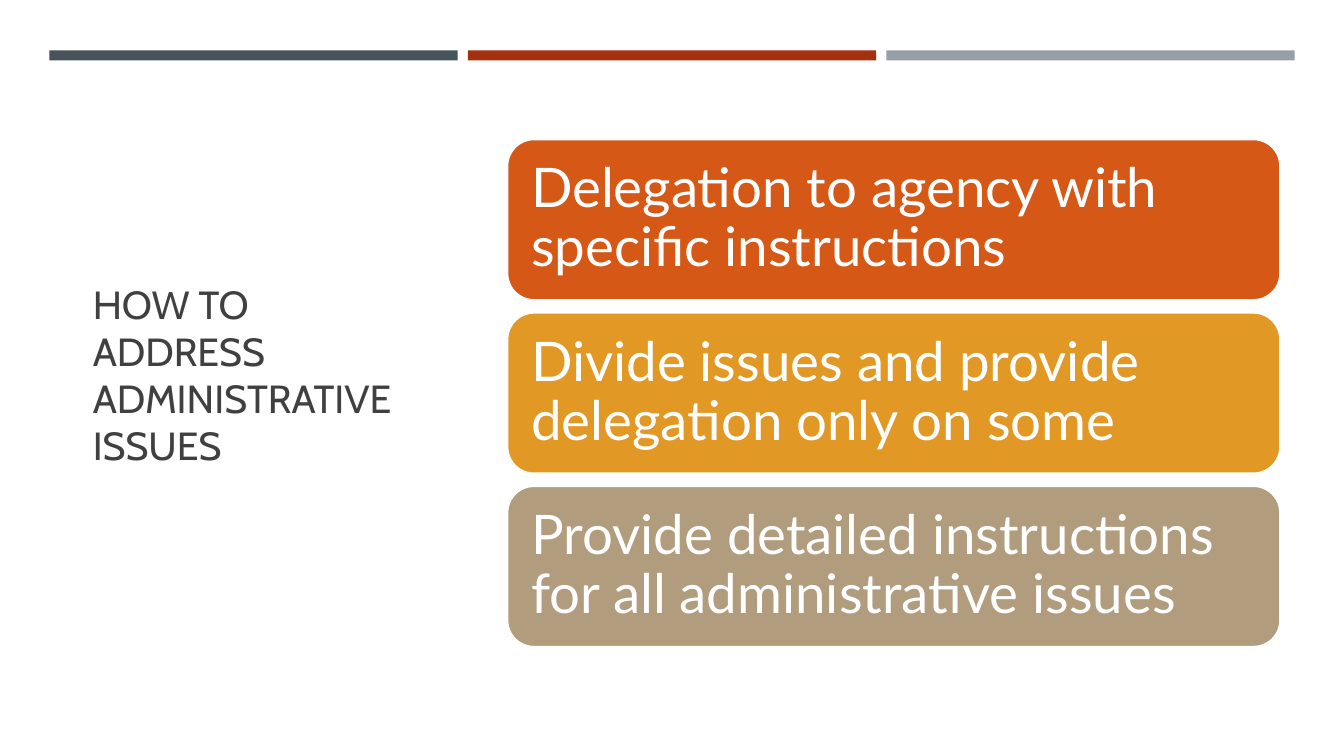
from pptx import Presentation
from pptx.dml.color import RGBColor
from pptx.enum.shapes import MSO_SHAPE as Shape
from pptx.enum.text import MSO_ANCHOR as Anchor, MSO_AUTO_SIZE as AutoSize, PP_ALIGN as Align
from pptx.util import Inches, Pt

SLATE = RGBColor(0x46, 0x53, 0x59)
BRICK = RGBColor(0xA5, 0x30, 0x0F)
GRAY = RGBColor(0x96, 0x9F, 0xA7)
ORANGE = RGBColor(0xD5, 0x58, 0x16)
AMBER = RGBColor(0xE1, 0x98, 0x25)
TAN = RGBColor(0xB1, 0x9C, 0x7D)
CHARCOAL = RGBColor(0x40, 0x40, 0x40)
WHITE = RGBColor(0xFF, 0xFF, 0xFF)

BAR_COLORS = (SLATE, BRICK, GRAY)
OPTIONS = (
    ("Delegation to agency with specific instructions", ORANGE),
    ("Divide issues and provide delegation only on some", AMBER),
    ("Provide detailed instructions for all administrative issues", TAN),
)


def write_text(shape, text, *, font, size, color, inset=(0.1, 0.05), spacing=1.0):
    frame = shape.text_frame
    frame.word_wrap = True
    frame.auto_size = AutoSize.NONE
    frame.vertical_anchor = Anchor.MIDDLE
    frame.margin_left = frame.margin_right = Inches(inset[0])
    frame.margin_top = frame.margin_bottom = Inches(inset[1])
    para = frame.paragraphs[0]
    para.alignment = Align.LEFT
    para.line_spacing = spacing
    span = para.add_run()
    span.text = text
    span.font.name = font
    span.font.size = Pt(size)
    span.font.color.rgb = color


def add_block(page, kind, left, top, width, height, fill):
    block = page.shapes.add_shape(
        kind, Inches(left), Inches(top), Inches(width), Inches(height)
    )
    block.shadow.inherit = False
    block.fill.solid()
    block.fill.fore_color.rgb = fill
    block.line.fill.background()
    return block


def add_bars(page):
    for index, color in enumerate(BAR_COLORS):
        add_block(page, Shape.RECTANGLE, 0.49 + index * 4.15, 0.5, 4.05, 0.1, color)


def add_title(page, text):
    title = page.shapes.title
    title.left, title.top = Inches(0.82), Inches(1.14)
    title.width, title.height = Inches(3.34), Inches(5.15)
    write_text(title, text, font="Cabin", size=28, color=CHARCOAL)


def add_options(page):
    for index, (text, color) in enumerate(OPTIONS):
        box = add_block(
            page, Shape.ROUNDED_RECTANGLE, 5.03, 1.38 + index * 1.72, 7.67, 1.6, color
        )
        box.line.color.rgb = WHITE
        box.line.width = Pt(1.75)
        write_text(
            box, text, font="Lato", size=39, color=WHITE, inset=(0.16, 0.16), spacing=0.9
        )


def main():
    deck = Presentation()
    deck.slide_width, deck.slide_height = Inches(13.33), Inches(7.5)
    page = deck.slides.add_slide(deck.slide_layouts[5])
    add_bars(page)
    add_title(page, "HOW TO ADDRESS ADMINISTRATIVE ISSUES")
    add_options(page)
    deck.save("out.pptx")


if __name__ == "__main__":
    main()
